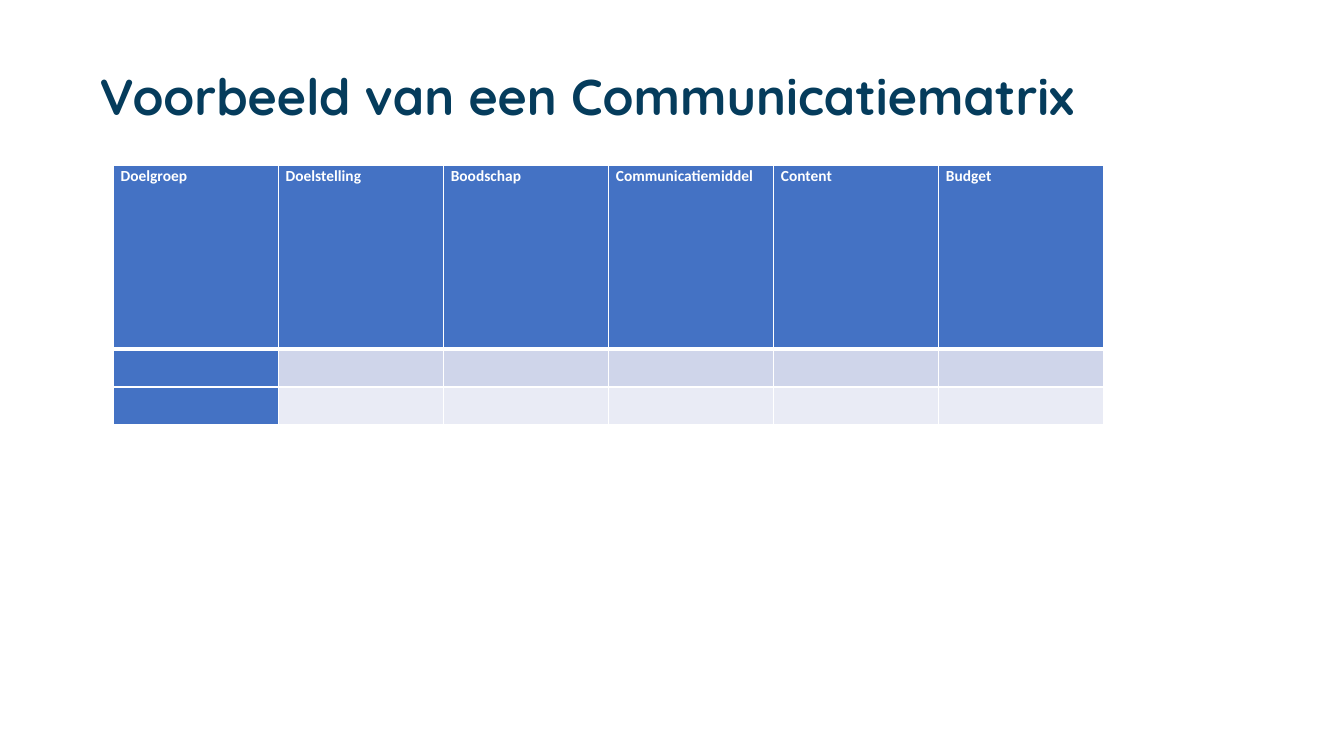
import pptx
import pptx.util
import pptx.dml.color
import pptx.enum.text
import pptx.oxml
import pptx.oxml.ns
from pptx.util import Cm

COLORS = {
    "title": "053C5C",
    "header": "4472C4",
    "band_dark": "CFD5EA",
    "band_light": "E9EBF5",
    "white": "FFFFFF",
}
HEADINGS = ["Doelgroep", "Doelstelling", "Boodschap",
            "Communicatiemiddel", "Content", "Budget"]
BANDS = ["band_dark", "band_light"]
COLUMN_WIDTH = 4.16
HEADER_HEIGHT = 4.62
ROW_HEIGHT = 0.96


def rgb(name):
    return pptx.dml.color.RGBColor.from_string(COLORS[name])


def style_paragraph(paragraph, font_name, size, color):
    paragraph.line_spacing = 1.07
    paragraph.space_after = pptx.util.Pt(8)
    for run in paragraph.runs:
        run.font.name = font_name
        run.font.size = pptx.util.Pt(size)
        run.font.bold = True
        run.font.color.rgb = rgb(color)


def add_title(slide, text):
    title = slide.shapes.add_textbox(Cm(2.26), Cm(1.4), Cm(29.51), Cm(1.83))
    frame = title.text_frame
    frame.word_wrap = True
    frame.auto_size = pptx.enum.text.MSO_AUTO_SIZE.SHAPE_TO_FIT_TEXT
    frame.text = text
    style_paragraph(frame.paragraphs[0], "Quicksand", 36, "title")


def set_borders(cell, widths):
    """Draw white borders; widths maps each side (L, R, T, B) to points."""
    properties = cell._tc.get_or_add_tcPr()
    for index, (side, width) in enumerate(widths.items()):
        properties.insert(index, pptx.oxml.parse_xml(
            f'<a:ln{side} {pptx.oxml.ns.nsdecls("a")} w="{pptx.util.Pt(width)}">'
            f'<a:solidFill><a:srgbClr val="{COLORS["white"]}"/></a:solidFill>'
            f'</a:ln{side}>'))


def style_cell(cell, fill, top, bottom):
    cell.fill.solid()
    cell.fill.fore_color.rgb = rgb(fill)
    cell.margin_left = cell.margin_right = Cm(0.19)
    cell.margin_top = cell.margin_bottom = 0
    set_borders(cell, {"L": 1, "R": 1, "T": top, "B": bottom})


def add_matrix(slide):
    row_count, column_count = len(BANDS) + 1, len(HEADINGS)
    matrix = slide.shapes.add_table(
        row_count, column_count, Cm(2.85), Cm(4.17),
        Cm(COLUMN_WIDTH * column_count),
        Cm(HEADER_HEIGHT + ROW_HEIGHT * len(BANDS))).table
    matrix.first_col = True
    for column in matrix.columns:
        column.width = Cm(COLUMN_WIDTH)
    for index, row in enumerate(matrix.rows):
        row.height = Cm(ROW_HEIGHT if index else HEADER_HEIGHT)

    for column, heading in enumerate(HEADINGS):
        header = matrix.cell(0, column)
        header.text_frame.text = heading
        style_paragraph(header.text_frame.paragraphs[0], "Calibri", 11, "white")
        style_cell(header, "header", top=1, bottom=3)
        for row, band in enumerate(BANDS, start=1):
            entry = matrix.cell(row, column)
            entry.text_frame.paragraphs[0].font.size = pptx.util.Pt(11)
            style_cell(entry, band if column else "header",
                       top=3 if row == 1 else 1, bottom=1)


def main():
    presentation = pptx.Presentation()
    presentation.slide_width = Cm(33.87)
    presentation.slide_height = Cm(19.05)
    slide = presentation.slides.add_slide(presentation.slide_layouts[6])
    add_title(slide, "Voorbeeld van een Communicatiematrix")
    add_matrix(slide)
    presentation.save("out.pptx")


if __name__ == "__main__":
    main()
